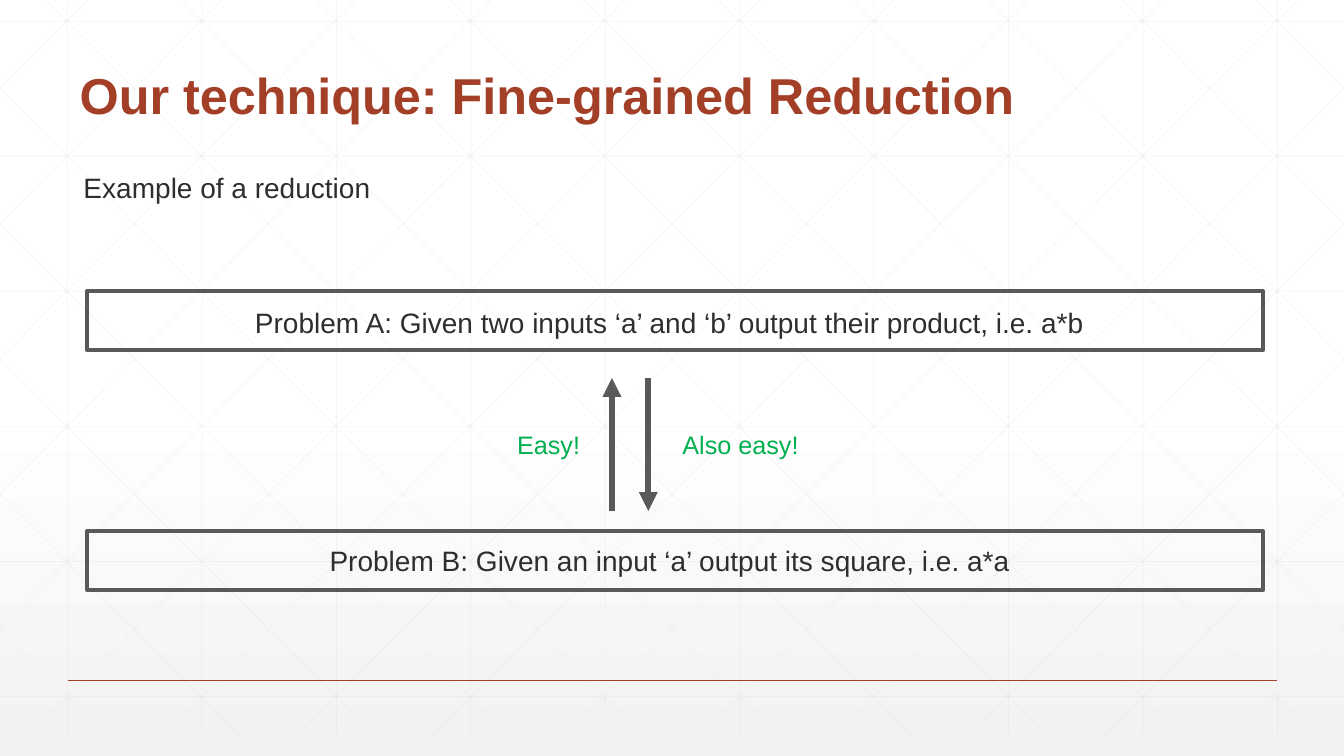
from copy import deepcopy
from dataclasses import dataclass

from lxml import etree
from pptx import Presentation
from pptx.dml.color import RGBColor
from pptx.enum.shapes import MSO_CONNECTOR, MSO_SHAPE
from pptx.enum.text import MSO_ANCHOR, MSO_AUTO_SIZE, PP_ALIGN
from pptx.oxml.ns import qn
from pptx.util import Inches, Pt

STRAIGHT = MSO_CONNECTOR.STRAIGHT
RECTANGLE = MSO_SHAPE.RECTANGLE
BOTTOM, TOP = MSO_ANCHOR.BOTTOM, MSO_ANCHOR.TOP
LEFT = PP_ALIGN.LEFT
NO_FIT = MSO_AUTO_SIZE.NONE

TITLE_ONLY = 5
WIDTH, HEIGHT = 13.33, 7.5


@dataclass(frozen=True)
class Theme:
    font: str = "Arial"
    accent: str = "A43F27"
    ink: str = "2D2E2D"
    frame: str = "595959"
    easy: str = "00B050"
    grid: str = "D9D9D9"
    paper: tuple = ((0, "FFFFFF"), (0.53, "FFFFFF"), (1, "F2F2F2"))
    title_size: int = 36
    body_size: int = 20
    label_size: int = 18


THEME = Theme()


def rgb(color):
    return RGBColor.from_string(color)


def paint_background(page):
    fill = page.background.fill
    fill.gradient()
    fill.gradient_angle = 270
    stop_list = page.element.find(".//" + qn("a:gsLst"))
    stop_list.insert(1, deepcopy(stop_list[0]))
    for stop, (position, color) in zip(fill.gradient_stops, THEME.paper):
        stop.position = position
        stop.color.rgb = rgb(color)


def add_line(shapes, start, end, color, weight, opacity=None, arrow=False):
    ends = [Inches(value) for value in (*start, *end)]
    connector = shapes.add_connector(STRAIGHT, *ends)
    connector.line.color.rgb = rgb(color)
    connector.line.width = Pt(weight)
    properties = connector.element.spPr
    if opacity is not None:
        shade = properties.find(".//" + qn("a:srgbClr"))
        etree.SubElement(shade, qn("a:alpha"), val=str(opacity * 1000))
    if arrow:
        outline = properties.find(qn("a:ln"))
        etree.SubElement(outline, qn("a:tailEnd"), type="triangle")
    etree.SubElement(properties, qn("a:effectLst"))


def add_grid(page):
    """Draw the faint square grid and its diagonals, clipped to the page."""
    bottom = 7.29
    pitch = 4 / 3
    run = 0.994  # horizontal travel of a diagonal per inch of height
    lines = []
    for column in range(10):
        x = 0.67 + column * pitch
        lines.append(((x, 0), (x, bottom)))
    for row in range(6):
        y = 0.21 + row * 1.34
        lines.append(((0, y), (WIDTH, y)))
    for step in range(-5, 10):
        x = 0.46 + step * pitch
        first = max(0, -x / run)
        last = min(bottom, (WIDTH - x) / run)
        start_x, end_x = x + first * run, x + last * run
        lines.append(((start_x, first), (end_x, last)))
        lines.append(((WIDTH - start_x, first), (WIDTH - end_x, last)))
    group = page.shapes.add_group_shape()
    for start, end in lines:
        add_line(group.shapes, start, end, THEME.grid, 0.5, opacity=25)
    # The grid lies behind the title.
    page.shapes.title.element.addprevious(group.element)


def write(shape, text, size, color, bold=False, wrap=True, anchor=TOP):
    frame = shape.text_frame
    frame.text = text
    frame.word_wrap = wrap
    frame.auto_size = NO_FIT
    frame.vertical_anchor = anchor
    para = frame.paragraphs[0]
    para.alignment = LEFT
    font = para.runs[0].font
    font.name = THEME.font
    font.size = Pt(size)
    font.bold = bold
    font.color.rgb = rgb(color)
    return para


def add_title(page, text):
    title = page.shapes.title
    title.left, title.top = Inches(0.41), Inches(0.04)
    title.width, title.height = Inches(10.83), Inches(1.25)
    para = write(title, text, THEME.title_size, THEME.accent,
                 bold=True, anchor=BOTTOM)
    para.line_spacing = 0.9
    title.text_frame.margin_left = Inches(0.38)


def add_text(page, text, place, size, color, wrap=True):
    box = page.shapes.add_textbox(*map(Inches, place))
    return write(box, text, size, color, wrap=wrap)


def add_problem(page, text, top, text_place):
    frame = page.shapes.add_shape(
        RECTANGLE, Inches(0.86), Inches(top), Inches(11.67), Inches(0.58))
    frame.shadow.inherit = False
    frame.fill.background()
    frame.line.color.rgb = rgb(THEME.frame)
    frame.line.width = Pt(3)
    add_text(page, text, text_place, THEME.body_size, THEME.ink, wrap=False)


def main():
    deck = Presentation()
    deck.slide_width, deck.slide_height = Inches(WIDTH), Inches(HEIGHT)
    page = deck.slides.add_slide(deck.slide_layouts[TITLE_ONLY])
    paint_background(page)
    add_grid(page)
    add_line(page.shapes, (0.67, 6.75), (12.67, 6.75), THEME.accent, 1)

    add_title(page, "Our technique: Fine-grained Reduction")
    intro = add_text(page, "Example of a reduction", (0.73, 1.68, 11.87, 4.97),
                     THEME.body_size, THEME.ink)
    intro.line_spacing = 0.9

    add_problem(
        page,
        "Problem A: Given two inputs ‘a’ and ‘b’ output their product, i.e. a*b",
        2.89, (2.43, 2.98, 8.48, 0.44))
    add_problem(
        page, "Problem B: Given an input ‘a’ output its square, i.e. a*a",
        5.27, (3.17, 5.34, 7, 0.44))

    upper, lower = 3.75, 5.07
    for x, start, end in ((6.43, upper, lower), (6.07, lower, upper)):
        add_line(page.shapes, (x, start), (x, end), THEME.frame, 4.5, arrow=True)
    for text, left, width in (("Easy!", 5.03, 1.07), ("Also easy!", 6.67, 1.36)):
        add_text(page, text, (left, 4.21, width, 0.4),
                 THEME.label_size, THEME.easy)

    deck.save("out.pptx")


if __name__ == "__main__":
    main()
